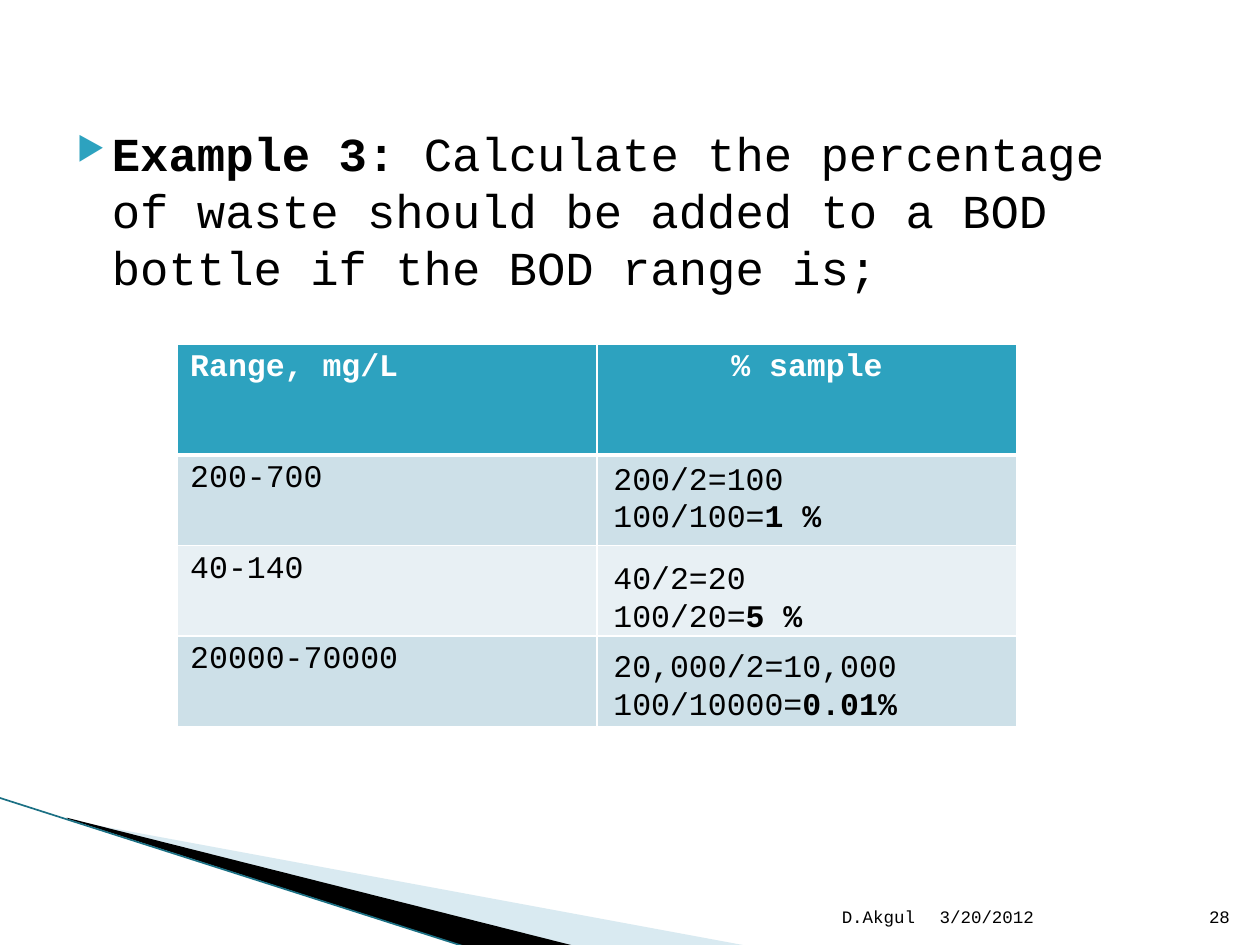
from typing import NamedTuple
from lxml.etree import SubElement
from pptx import Presentation
from pptx.dml.color import RGBColor
from pptx.enum.shapes import MSO_CONNECTOR
from pptx.enum.text import MSO_ANCHOR, PP_ALIGN
from pptx.oxml.ns import qn
from pptx.util import Inches, Pt

FONT = "Courier New"
BLACK, WHITE, TEAL = "000000", "FFFFFF", "2DA2BF"
COLS, ROWS = 100, 75

deck = Presentation()
deck.slide_width, deck.slide_height = Inches(10), Inches(7.5)
slide = deck.slides.add_slide(deck.slide_layouts[6])
shapes = slide.shapes


class Box(NamedTuple):
    """A place on the grid, in columns and rows."""
    left: float
    top: float
    width: float
    height: float


class Wedge(NamedTuple):
    """A filled corner sliver."""
    points: list[tuple[float, float]]
    color: str
    alpha: int


class Note(NamedTuple):
    """A footer entry."""
    text: str
    left: float
    width: float
    align: PP_ALIGN


class Case(NamedTuple):
    """A table row and the working laid over it."""
    span: str
    half: str
    ratio: str
    share: str
    top: float
    fill: str


WEDGES = [
    Wedge([(5.5, 65.1), (59.5, 75.1), (45.6, 75.1), (5.5, 65)], "A0CBDC", 40),
    Wedge([(5.3, 64.9), (45.7, 75.1), (37.2, 75.2), (5.4, 65)], BLACK, 100),
]
NOTES = [
    Note("3/20/2012", 73.6, 21, PP_ALIGN.LEFT),
    Note("D.Akgul", 47.9, 25.7, PP_ALIGN.RIGHT),
    Note("28", 94.6, 4, PP_ALIGN.RIGHT),
]
CASES = [
    Case("200-700", "200/2=100", "100/100=", "1 %", 35.9, "CDE0E8"),
    Case("40-140", "40/2=20", "100/20=", "5 %", 43.8, "E8F0F4"),
    Case("20000-70000", "20,000/2=10,000", "100/10000=", "0.01%", 50.8, "CDE0E8"),
]


def col(n: float) -> int:
    """Turn grid columns into a length."""
    return round(deck.slide_width * n / COLS)


def row(n: float) -> int:
    """Turn grid rows into a length."""
    return round(deck.slide_height * n / ROWS)


def place(box: Box) -> tuple[int, int, int, int]:
    """Turn a grid box into lengths."""
    return col(box.left), row(box.top), col(box.width), row(box.height)


def rgb(code: str) -> RGBColor:
    """Read a hex colour."""
    return RGBColor.from_string(code)


def style(para, size: float, color: str = BLACK, bold: bool | None = None) -> None:
    """Set the font of a paragraph."""
    font = para.font
    font.name, font.size, font.bold = FONT, Pt(size), bold
    font.color.rgb = rgb(color)


def add_text(box: Box, anchor: MSO_ANCHOR = MSO_ANCHOR.TOP):
    """Add a wrapping text box and return its frame."""
    frame = shapes.add_textbox(*place(box)).text_frame
    frame.word_wrap, frame.vertical_anchor = True, anchor
    return frame


def add_run(para, text: str, bold: bool = False) -> None:
    """Add a run that is plain or bold."""
    run = para.add_run()
    run.text = text
    if bold:
        run.font.bold = True


def add_wedge(wedge: Wedge) -> None:
    """Draw a corner sliver."""
    points = [(col(x), row(y)) for x, y in wedge.points]
    path = shapes.build_freeform(*points[0])
    path.add_line_segments(points[1:], close=True)
    shape = path.convert_to_shape()
    shape.shadow.inherit = False
    shape.fill.solid()
    shape.fill.fore_color.rgb = rgb(wedge.color)
    shape.line.fill.background()
    if wedge.alpha < 100:
        tint = shape.fill._xPr.find(qn("a:solidFill"))[0]
        SubElement(tint, qn("a:alpha"), val=str(wedge.alpha * 1000))


def add_edge() -> None:
    """Draw the thin line along the corner."""
    line = shapes.add_connector(
        MSO_CONNECTOR.STRAIGHT, col(-0.1), row(63.3), col(37.1), row(75.2))
    line.line.color.rgb = rgb("1B7084")
    line.line.width = Pt(0.95)
    SubElement(line._element.spPr, qn("a:effectLst"))


def add_task() -> None:
    """Write the bulleted question."""
    para = add_text(Box(3.9, 9.4, 90, 49.5)).paragraphs[0]
    props = para._p.get_or_add_pPr()
    props.set("marL", str(col(4)))
    props.set("indent", str(col(-2.8)))
    tint = SubElement(props, qn("a:buClr"))
    SubElement(tint, qn("a:srgbClr"), val=TEAL)
    SubElement(props, qn("a:buSzPct"), val="68000")
    SubElement(props, qn("a:buChar"), char="▶")
    style(para, 27)
    add_run(para, "Example 3: ", True)
    add_run(para, "Calculate the percentage of waste should be added "
                  "to a BOD bottle if the BOD range is;")


def add_note(note: Note) -> None:
    """Write a footer entry."""
    box = Box(note.left, 70.1, note.width, 4)
    para = add_text(box, MSO_ANCHOR.BOTTOM).paragraphs[0]
    para.text, para.alignment = note.text, note.align
    style(para, 10)


def set_cell(cell, text: str, fill: str, color: str = BLACK,
             bold: bool = False, base: float = 1) -> None:
    """Fill, edge and write a table cell."""
    props = cell._tc.get_or_add_tcPr()
    for side in ("lnL", "lnR", "lnT", "lnB"):
        width = Pt(base if side == "lnB" else 1)
        edge = SubElement(props, qn(f"a:{side}"), w=str(width))
        paint = SubElement(edge, qn("a:solidFill"))
        SubElement(paint, qn("a:srgbClr"), val=WHITE)
    cell.fill.solid()
    cell.fill.fore_color.rgb = rgb(fill)
    para = cell.text_frame.paragraphs[0]
    if text:
        para.text = text
    style(para, 18, color, bold)


def add_grid() -> None:
    """Build the table of ranges."""
    box = Box(14.1, 27.3, 66.6, 30.4)
    grid = shapes.add_table(len(CASES) + 1, 2, *place(box)).table
    for i, line in enumerate(grid.rows):
        line.height = row(7.2 if i else 8.8)
    for cell, text in zip(grid.rows[0].cells, ("Range, mg/L", "% sample")):
        set_cell(cell, text, TEAL, WHITE, True, 3)
    grid.cell(0, 1).text_frame.paragraphs[0].alignment = PP_ALIGN.CENTER
    for i, case in enumerate(CASES, 1):
        set_cell(grid.cell(i, 0), case.span, case.fill)
        set_cell(grid.cell(i, 1), "", case.fill)


def add_case(case: Case) -> None:
    """Write the working of one range."""
    frame = add_text(Box(47.7, case.top, 32, 7.1))
    first, last = frame.paragraphs[0], frame.add_paragraph()
    first.text = case.half
    add_run(last, case.ratio)
    add_run(last, case.share, True)
    for para in (first, last):
        style(para, 18)


def main() -> None:
    """Build and save the slide."""
    for wedge in WEDGES:
        add_wedge(wedge)
    add_edge()
    add_task()
    for note in NOTES:
        add_note(note)
    add_grid()
    for case in CASES:
        add_case(case)
    deck.save("out.pptx")


if __name__ == "__main__":
    main()
